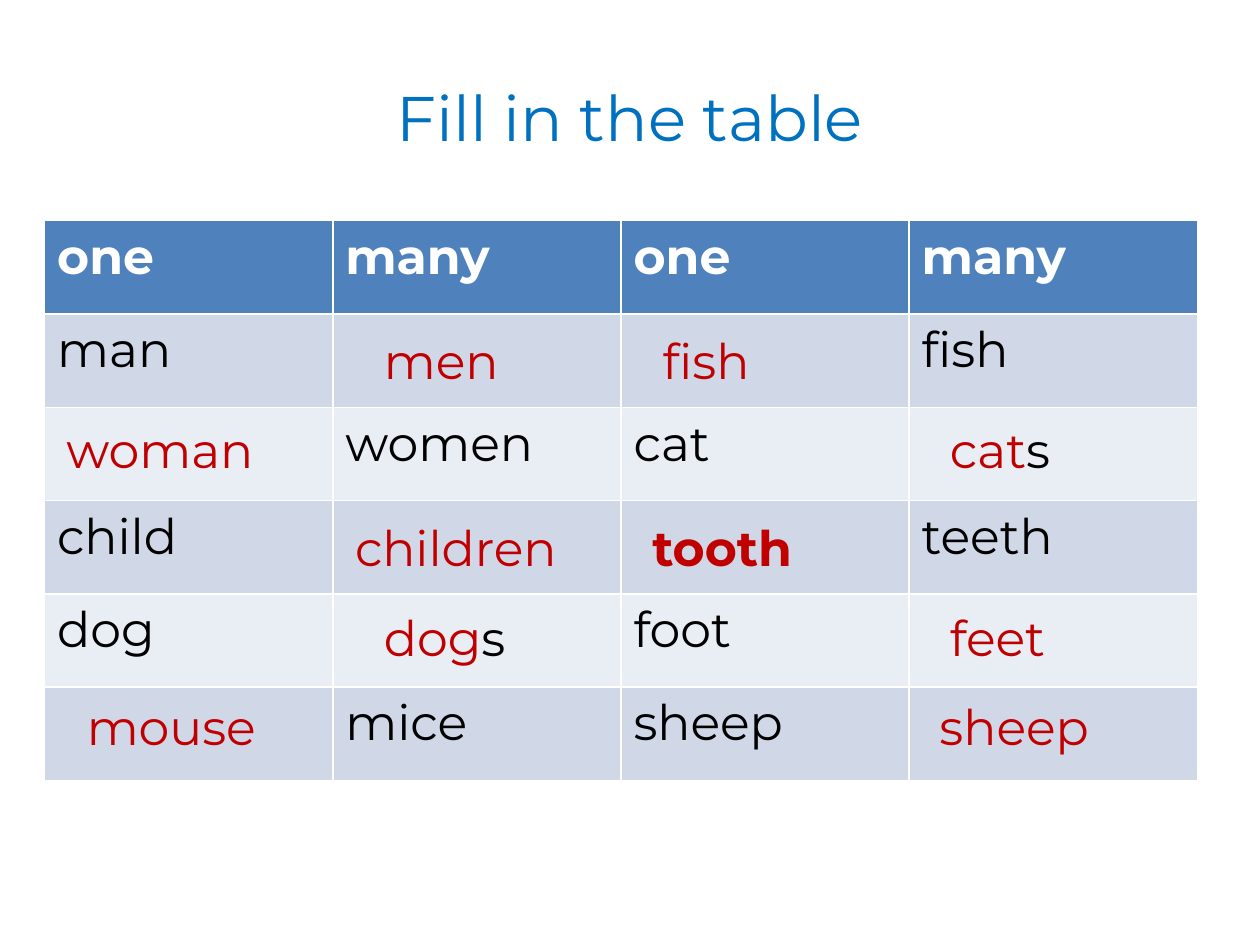
from pptx import Presentation
from pptx import util as u
from pptx.dml.color import RGBColor
from pptx.enum import text as t

COLORS = {
    "title": "0070C0",
    "header": "4F81BD",
    "header_text": "FFFFFF",
    "band_dark": "D0D8E8",
    "band_light": "E9EDF4",
    "word": "000000",
    "answer": "C00000",
}

ROWS = [
    ["one", "many", "one", "many"],
    ["man", "", "", "fish"],
    ["", "women", "cat", ""],
    ["child", "", "", "teeth"],
    ["dog", "", "foot", ""],
    ["", "mice", "sheep", ""],
]

# Top of the answers in each word row, then (left, width, stem, ending, bold)
ANSWERS = [
    (6.53, [(7.49, 3.81, "men", "", False), (13.11, 4.39, "fish", "", False)]),
    (8.33, [(1.09, 5.21, "woman", "", False), (18.9, 3.2, "cat", "s", False)]),
    (10.31, [(6.91, 5.59, "children", "", False), (12.9, 3.81, "tooth", "", True)]),
    (12.12, [(7.49, 3.99, "dog", "s", False), (18.9, 3.99, "feet", "", False)]),
    (13.92, [(1.5, 4.8, "mouse", "", False), (18.69, 4.8, "sheep", "", False)]),
]


def add_text(paragraph, content, *, color, size=28, bold=False, font="Montserrat"):
    run = paragraph.add_run()
    run.text = content
    run.font.name = font
    run.font.size = u.Pt(size)
    run.font.bold = bold
    run.font.color.rgb = RGBColor.from_string(COLORS[color])


class WordSlide:
    def __init__(self, slide):
        self.slide = slide

    def text_box(self, left, top, width, height):
        box = self.slide.shapes.add_textbox(u.Cm(left), u.Cm(top), u.Cm(width), u.Cm(height))
        box.text_frame.word_wrap = True
        return box.text_frame

    def title(self, content):
        frame = self.text_box(1.27, 0.76, 22.86, 3.18)
        frame.vertical_anchor = t.MSO_ANCHOR.MIDDLE
        paragraph = frame.paragraphs[0]
        paragraph.alignment = t.PP_ALIGN.CENTER
        add_text(paragraph, content, color="title", size=36)

    def table(self, rows, left, top, column_width, row_height):
        columns = len(rows[0])
        table = self.slide.shapes.add_table(
            len(rows), columns, u.Cm(left), u.Cm(top),
            u.Cm(column_width * columns), u.Cm(row_height * len(rows)),
        ).table
        for row_index, words in enumerate(rows):
            is_header = row_index == 0
            band = "band_dark" if row_index % 2 else "band_light"
            for column_index, word in enumerate(words):
                cell = table.cell(row_index, column_index)
                cell.fill.solid()
                cell.fill.fore_color.rgb = RGBColor.from_string(
                    COLORS["header" if is_header else band])
                if word:
                    add_text(cell.text_frame.paragraphs[0], word, bold=is_header,
                             color="header_text" if is_header else "word")

    def answer(self, left, top, width, stem, ending, bold):
        """Write the stem in the answer colour and any given ending in black."""
        frame = self.text_box(left, top, width, 1.45)
        frame.auto_size = t.MSO_AUTO_SIZE.SHAPE_TO_FIT_TEXT
        paragraph = frame.paragraphs[0]
        add_text(paragraph, stem, color="answer", bold=bold)
        if ending:
            add_text(paragraph, ending, color="word", bold=bold)


def main():
    presentation = Presentation()
    presentation.slide_width, presentation.slide_height = u.Cm(25.4), u.Cm(19.05)
    word_slide = WordSlide(presentation.slides.add_slide(presentation.slide_layouts[6]))
    word_slide.title("Fill in the table")
    word_slide.table(ROWS, left=0.9, top=4.45, column_width=5.81, row_height=1.88)
    for top, answers in ANSWERS:
        for left, width, stem, ending, bold in answers:
            word_slide.answer(left, top, width, stem, ending, bold)
    presentation.save("out.pptx")


if __name__ == "__main__":
    main()
